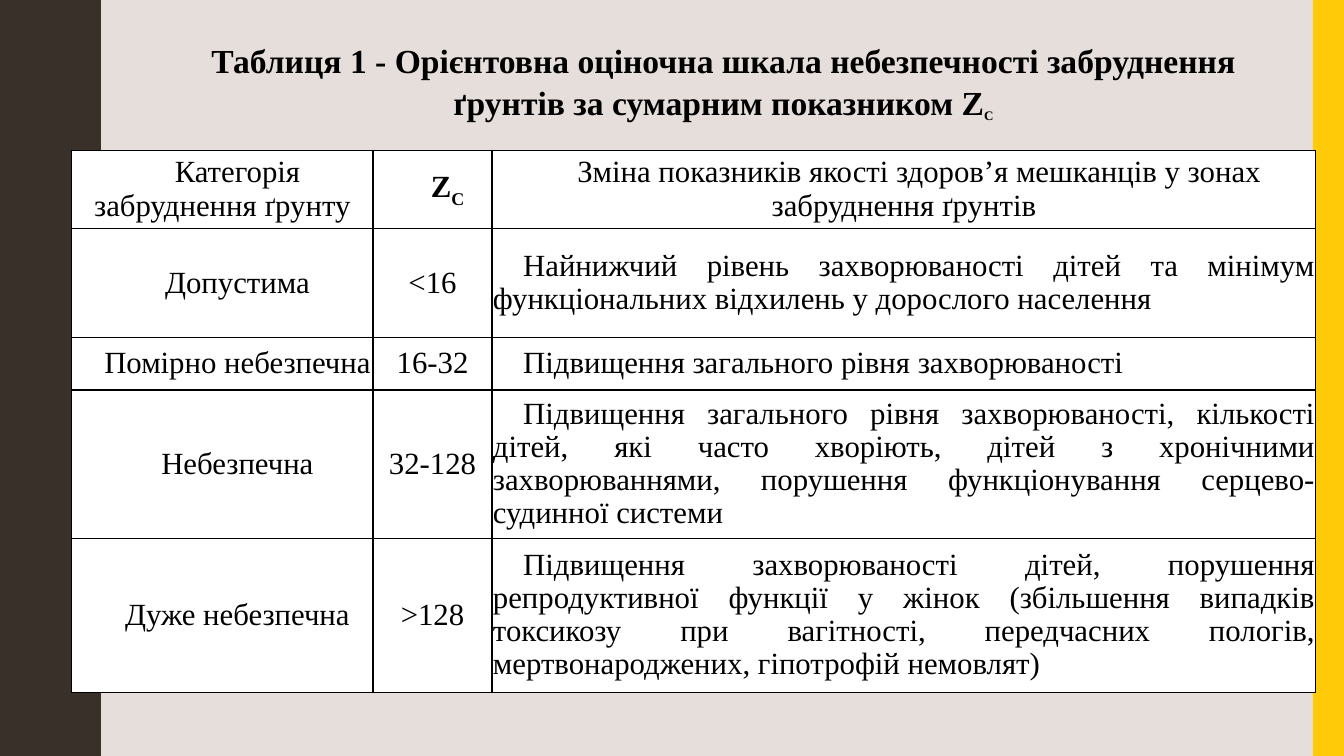
from lxml import etree
from pptx import Presentation
from pptx.dml.color import RGBColor
from pptx.enum.shapes import MSO_SHAPE
from pptx.enum.text import MSO_ANCHOR, PP_ALIGN
from pptx.oxml.ns import qn
from pptx.util import Inches, Pt

RECT = MSO_SHAPE.RECTANGLE
MIDDLE = MSO_ANCHOR.MIDDLE
CENTER, JUSTIFY = PP_ALIGN.CENTER, PP_ALIGN.JUSTIFY

COLORS = {"back": "E5DEDB", "wave": "39302A", "stripe": "FFCA08",
          "ink": "000000", "cell": "FFFFFF"}
FONT = "Times New Roman"
WIDTH, HEIGHT = 13.33, 7.5

# Runs: text, size, bold, subscript
TITLE = [("Таблиця 1 - Орієнтовна оціночна шкала небезпечності забруднення "
          "ґрунтів за сумарним показником Z", 24, True, False),
         ("С", 16, True, True)]
Z_HEADER = [("Z", 22, True, False), ("С", 22, True, True)]
ROWS = [
    ("Категорія забруднення ґрунту", Z_HEADER,
     "Зміна показників якості здоров’я мешканців у зонах забруднення ґрунтів"),
    ("Допустима", "<16",
     "Найнижчий рівень захворюваності дітей та мінімум функціональних "
     "відхилень у дорослого населення"),
    ("Помірно небезпечна", "16-32",
     "Підвищення загального рівня захворюваності"),
    ("Небезпечна", "32-128",
     "Підвищення загального рівня захворюваності, кількості дітей, які часто "
     "хворіють, дітей з хронічними захворюваннями, порушення функціонування "
     "серцево-судинної системи"),
    ("Дуже небезпечна", ">128",
     "Підвищення захворюваності дітей, порушення репродуктивної функції у "
     "жінок (збільшення випадків токсикозу при вагітності, передчасних "
     "пологів, мертвонароджених, гіпотрофій немовлят)"),
]
COL_WIDTHS = [2.99, 1.18, 8.17]
ROW_HEIGHTS = [0.78, 1.08, 0.52, 1.47, 1.53]

# Half of one wave, from trough to crest: x, y
WAVE_PERIOD = 1.5
HALF_WAVE = [(0.78, 0), (0.78, 0.07), (0.79, 0.14), (0.8, 0.2), (0.81, 0.25),
             (0.83, 0.29), (0.85, 0.33), (0.87, 0.38), (0.89, 0.42),
             (0.91, 0.46), (0.93, 0.5), (0.95, 0.55), (0.96, 0.61),
             (0.97, 0.68), (0.97, 0.75)]


def rgb(name):
    return RGBColor.from_string(COLORS[name])


def paint(sp, color):
    sp.shadow.inherit = False
    sp.fill.solid()
    sp.fill.fore_color.rgb = rgb(color)
    sp.line.fill.background()


def add_runs(p, runs):
    for text, size, bold, subscript in runs:
        r = p.add_run()
        r.text = text
        r.font.name = FONT
        r.font.size = Pt(size)
        r.font.bold = bold
        r.font.color.rgb = rgb("ink")
        if subscript:
            r._r.get_or_add_rPr().set("baseline", "-25000")


def add_borders(cell):
    tcPr = cell._tc.get_or_add_tcPr()
    for i, side in enumerate(("lnL", "lnR", "lnT", "lnB")):
        ln = etree.Element(qn(f"a:{side}"), w=str(Pt(1)))
        fill = etree.SubElement(ln, qn("a:solidFill"))
        etree.SubElement(fill, qn("a:srgbClr"), val=COLORS["ink"])
        tcPr.insert(i, ln)


def add_wave(s):
    wave = HALF_WAVE + [(x, WAVE_PERIOD - y) for x, y in HALF_WAVE[-2::-1]]
    edge = [(x, y + n * WAVE_PERIOD)
            for n in range(round(HEIGHT / WAVE_PERIOD)) for x, y in wave]
    builder = s.shapes.build_freeform(0, 0, scale=Inches(1))
    builder.add_line_segments(edge + [(0, HEIGHT)], close=True)
    paint(builder.convert_to_shape(), "wave")


def add_title(s):
    tf = s.shapes.add_textbox(Inches(1.58), Inches(0.33),
                              Inches(11.19), Inches(0.91)).text_frame
    tf.word_wrap = True
    p = tf.paragraphs[0]
    p.alignment = CENTER
    p.line_spacing = 1.04
    add_runs(p, TITLE)


def fill_cell(cell, content, row, col):
    cell.fill.solid()
    cell.fill.fore_color.rgb = rgb("cell")
    cell.vertical_anchor = MIDDLE
    cell.margin_left = cell.margin_right = Inches(0.01)
    cell.margin_top = cell.margin_bottom = 0
    add_borders(cell)
    p = cell.text_frame.paragraphs[0]
    p.alignment = JUSTIFY if row and col == 2 else CENTER
    p.line_spacing = 0.97
    if row == 0 or col != 1:
        pPr = p._p.get_or_add_pPr()
        pPr.set("marL", "0")
        pPr.set("indent", str(Inches(0.3)))
    runs = [(content, 22, False, False)] if isinstance(content, str) else content
    add_runs(p, runs)


def add_scale_table(s):
    table = s.shapes.add_table(
        len(ROWS), len(COL_WIDTHS), Inches(0.71), Inches(1.49),
        Inches(sum(COL_WIDTHS)), Inches(sum(ROW_HEIGHTS))).table
    table.first_row = table.horz_banding = False
    for column, width in zip(table.columns, COL_WIDTHS):
        column.width = Inches(width)
    for row, height in zip(table.rows, ROW_HEIGHTS):
        row.height = Inches(height)
    for i, row in enumerate(ROWS):
        for j, content in enumerate(row):
            fill_cell(table.cell(i, j), content, i, j)


def main():
    prs = Presentation()
    prs.slide_width, prs.slide_height = Inches(WIDTH), Inches(HEIGHT)
    s = prs.slides.add_slide(prs.slide_layouts[6])
    s.background.fill.solid()
    s.background.fill.fore_color.rgb = rgb("back")
    add_wave(s)
    stripe = s.shapes.add_shape(RECT, Inches(WIDTH - 0.31), 0,
                                Inches(0.31), Inches(HEIGHT))
    paint(stripe, "stripe")
    add_title(s)
    add_scale_table(s)
    prs.save("out.pptx")


if __name__ == "__main__":
    main()
